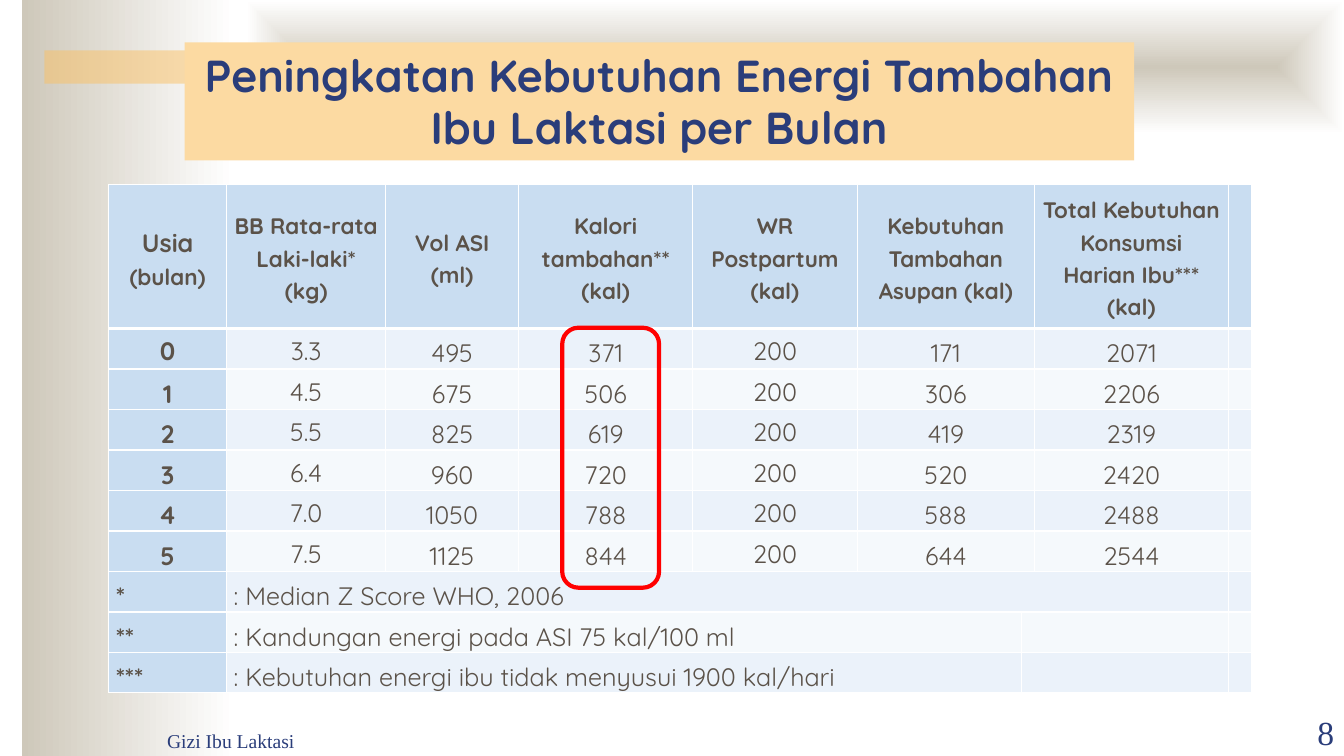
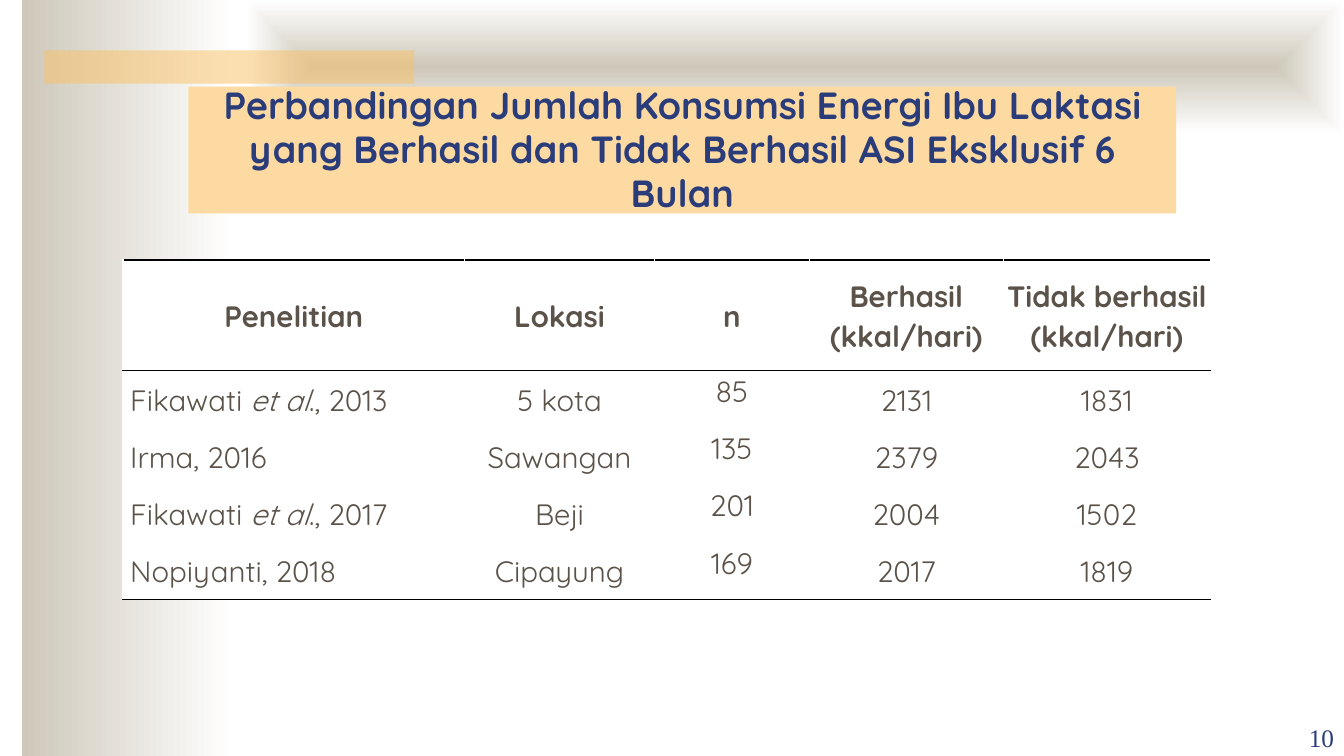
import pptx
import pptx.dml.color
import pptx.enum.dml
import pptx.enum.shapes
import pptx.enum.text
import pptx.oxml
import pptx.oxml.ns
import pptx.util
from lxml import etree

Cm, Pt = pptx.util.Cm, pptx.util.Pt
RGB = pptx.dml.color.RGBColor
SHAPE = pptx.enum.shapes.MSO_SHAPE
ALIGN = pptx.enum.text.PP_ALIGN
ANCHOR = pptx.enum.text.MSO_ANCHOR
qn = pptx.oxml.ns.qn

# Shared look
NAVY, BROWN = RGB(0x2A, 0x3D, 0x7A), RGB(0x5B, 0x52, 0x49)
SAND, WHITE, BLACK = RGB(0xCE, 0xC8, 0xBA), RGB(255, 255, 255), RGB(0, 0, 0)
ORANGE, PEACH, RED = RGB(0xFA, 0xC1, 0x64), RGB(0xFC, 0xDA, 0xA2), RGB(255, 0, 0)
HEAD_BLUE = RGB(0xC9, 0xDD, 0xF1)
ROW_BLUES = (RGB(0xF5, 0xF9, 0xFC), RGB(0xEB, 0xF2, 0xFA))
BODY_FONT, FOOTER_FONT = "Quicksand", "Times New Roman"
NUMBER_PLACE = (30.48, 17.81, 3.39, 1.27)
FOOTER_PLACE = (3.96, 17.81, 7.06, 1.27)

# Slide 8 content
ENERGY_TITLE = "Peningkatan Kebutuhan Energi Tambahan Ibu Laktasi per Bulan"
ENERGY_HEADS = (
    (("Usia ", {"size": Pt(18)}), ("(bulan)", {})),
    "BB Rata-rata Laki-laki*\v(kg)",
    "Vol ASI (ml)",
    "Kalori tambahan** (kal)",
    "WR Postpartum (kal)",
    "Kebutuhan Tambahan Asupan (kal)",
    "Total Kebutuhan Konsumsi Harian Ibu*** (kal)",
)
ENERGY_ROWS = (
    ("0", "3.3", "495", "371", "200", "171", "2071"),
    ("1", "4.5", "675", "506", "200", "306", "2206"),
    ("2", "5.5", "825", "619", "200", "419", "2319"),
    ("3", "6.4", "960", "720", "200", "520", "2420"),
    ("4", "7.0", "1050", "788", "200", "588", "2488"),
    ("5", "7.5", "1125", "844", "200", "644", "2544"),
)
ENERGY_NOTES = (
    ("*", ": Median Z Score WHO, 2006"),
    ("**", ": Kandungan energi pada ASI 75 kal/100 ml"),
    ("***", ": Kebutuhan energi ibu tidak menyusui 1900 kal/hari"),
)
ENERGY_WIDTHS = (2.97, 4.01, 3.35, 4.39, 4.14, 4.14, 0.33, 4.88, 0.58)
TEXT_COLUMNS = (0, 1, 2, 3, 4, 5, 7)

# Slide 10 content
STUDY_TITLE = ("Perbandingan Jumlah Konsumsi Energi Ibu Laktasi yang Berhasil "
               "dan Tidak Berhasil ASI Eksklusif 6 Bulan")
ET_AL = ("et al", {"italic": True})
STUDY_ROWS = (
    ("Penelitian", "Lokasi", "n", "Berhasil\n(kkal/hari)", "Tidak berhasil\n(kkal/hari)"),
    ((("Fikawati ", {}), ET_AL, ("., 2013", {})), "5 kota", "85", "2131", "1831"),
    ("Irma, 2016", "Sawangan", "135", "2379", "2043"),
    ((("Fikawati ", {}), ET_AL, ("., 2017", {})), "Beji", "201", "2004", "1502"),
    ("Nopiyanti, 2018", "Cipayung", "169", "2017", "1819"),
)
STUDY_WIDTHS = (8.61, 4.78, 3.91, 4.88, 5.23)


def place(values):
    return [Cm(value) for value in values]


def style_font(font, size, color, name=BODY_FONT, bold=False):
    font.size, font.name, font.bold = Pt(size), name, bold
    font.color.rgb = color


def add_backdrop(deck, page):
    """Draw the bands on a page, then move them to the back of the master."""
    bands = [page.shapes.add_shape(SHAPE.RECTANGLE, *place(spot)) for spot in (
        (0.56, 0, 5.36, 19.05), (6.2, 0, 27.66, 3.38), (1.12, 1.27, 9.32, 0.84))]
    side, top, accent = bands
    for band in (side, top):
        band.fill.gradient()
        band.fill.gradient_angle = 0
        for stop, color in zip(band.fill.gradient_stops, (SAND, WHITE)):
            stop.color.rgb = color
    # The top band fades from its middle to its edges
    linear = top.element.find(".//" + qn("a:lin"))
    center = etree.Element(qn("a:path"), {"path": "rect"})
    etree.SubElement(center, qn("a:fillToRect"), dict.fromkeys("ltrb", "50000"))
    linear.getparent().replace(linear, center)
    accent.fill.solid()
    accent.fill.fore_color.rgb = ORANGE
    tint = accent.element.find(".//" + qn("a:srgbClr"))
    etree.SubElement(tint, qn("a:alpha"), {"val": "50000"})
    for order, band in enumerate(bands):
        band.line.fill.background()
        band.shadow.inherit = False
        band.element.find(".//" + qn("p:cNvPr")).set("id", str(100 + order))
        deck.slide_master.shapes.element.insert(2 + order, band.element)


def set_title(page, text, spot, size, anchor):
    title = page.shapes.title
    title.left, title.top, title.width, title.height = place(spot)
    title.fill.solid()
    title.fill.fore_color.rgb = PEACH
    frame = title.text_frame
    frame.text, frame.word_wrap, frame.vertical_anchor = text, True, anchor
    frame.auto_size = pptx.enum.text.MSO_AUTO_SIZE.NONE
    para = frame.paragraphs[0]
    para.alignment, para.line_spacing = ALIGN.CENTER, 0.97
    style_font(para.font, size, NAVY, bold=True)


def add_footer(page, text, spot, size, align):
    frame = page.shapes.add_textbox(*place(spot)).text_frame
    frame.text, frame.word_wrap, frame.vertical_anchor = text, True, ANCHOR.BOTTOM
    frame.paragraphs[0].alignment = align
    style_font(frame.paragraphs[0].font, size, NAVY, FOOTER_FONT)


def add_table(page, left, top, widths, heights):
    table = page.shapes.add_table(len(heights), len(widths), *place(
        (left, top, sum(widths), sum(heights)))).table
    table.first_row = table.horz_banding = False
    for column, width in zip(table.columns, widths):
        column.width = Cm(width)
    for row, height in zip(table.rows, heights):
        row.height = Cm(height)
    return table


def paint_cell(cell, fill, top, bottom):
    """Set the fill and the borders; top and bottom are (colour, points)."""
    props = cell._tc.get_or_add_tcPr()
    side = (WHITE, 1)
    for tag, (color, width) in zip(("lnL", "lnR", "lnT", "lnB"), (side, side, top, bottom)):
        line = etree.SubElement(props, qn("a:" + tag), {"w": str(Pt(width))})
        solid = etree.SubElement(line, qn("a:solidFill"))
        etree.SubElement(solid, qn("a:srgbClr"), {"val": str(color)})
    cell.fill.solid()
    cell.fill.fore_color.rgb = fill


def write_cell(cell, content, size, bold, align, anchor, spacing, inset):
    """Write a string, or a tuple of (text, font changes) spans."""
    cell.margin_left = cell.margin_right = Cm(inset)
    cell.margin_top = cell.margin_bottom = 0
    cell.vertical_anchor = anchor
    if isinstance(content, str):
        cell.text_frame.text = content
    for para in cell.text_frame.paragraphs:
        para.alignment, para.line_spacing = align, spacing
        style_font(para.font, size, BROWN, bold=bold)
    if not isinstance(content, str):
        for text, changes in content:
            span = cell.text_frame.paragraphs[0].add_run()
            span.text = text
            for name, value in changes.items():
                setattr(span.font, name, value)


def build_energy_page(page):
    set_title(page, ENERGY_TITLE, (4.65, 1.07, 23.93, 2.97), 32, ANCHOR.BOTTOM)
    add_footer(page, "Gizi Ibu Laktasi", FOOTER_PLACE, 14, ALIGN.LEFT)
    add_footer(page, "8", NUMBER_PLACE, 24, ALIGN.RIGHT)

    rows = (ENERGY_HEADS,) + ENERGY_ROWS + ENERGY_NOTES
    first_note = 1 + len(ENERGY_ROWS)
    table = add_table(page, 2.74, 4.65, ENERGY_WIDTHS, [3.63] + [1.02] * (len(rows) - 1))
    thin, thick = (WHITE, 1), (WHITE, 3)
    for r, row in enumerate(rows):
        texts = dict(zip(TEXT_COLUMNS, row))
        for c in range(len(ENERGY_WIDTHS)):
            head = r == 0 or c == 0
            middle = r == 0 or c in (1, 4) and r < first_note or (r, c) == (1, 0)
            cell = table.cell(r, c)
            paint_cell(cell, HEAD_BLUE if head else ROW_BLUES[r % 2],
                       thick if r == 1 else thin, thick if r == 0 else thin)
            write_cell(cell, texts.get(c, ""), 16 if r == 0 else 18, head,
                       ALIGN.LEFT if r >= first_note else ALIGN.CENTER,
                       ANCHOR.MIDDLE if middle else ANCHOR.BOTTOM, 1.15, 0.18)
        if r < first_note:
            merges = [(5, 6)]
        elif r == first_note:
            merges = [(1, 7)]
        else:
            merges = [(1, 5), (6, 7)]
        for start, end in merges:
            table.cell(r, start).merge(table.cell(r, end))

    # Frame around the extra calories
    frame = page.shapes.add_shape(SHAPE.ROUNDED_RECTANGLE, *place((14.17, 8.26, 2.44, 6.55)))
    frame.shadow.inherit = False
    frame.fill.background()
    frame.line.color.rgb, frame.line.width = RED, Pt(3)


def build_study_page(page):
    set_title(page, STUDY_TITLE, (4.75, 2.18, 24.89, 3.2), 27, ANCHOR.MIDDLE)
    last = len(STUDY_ROWS) - 1
    table = add_table(page, 3.1, 6.55, STUDY_WIDTHS, [2.79] + [1.44] * last)
    rule, blank = (BLACK, 1), (WHITE, 1)
    for r, row in enumerate(STUDY_ROWS):
        for c, content in enumerate(row):
            cell = table.cell(r, c)
            paint_cell(cell, WHITE, rule if r <= 1 else blank,
                       rule if r in (0, last) else blank)
            write_cell(cell, content, 21, r == 0,
                       ALIGN.LEFT if c == 0 and r else ALIGN.CENTER,
                       ANCHOR.TOP if c == 2 and r else ANCHOR.MIDDLE,
                       1.07, 0.18 if c == 0 else 0)
    add_footer(page, "10", NUMBER_PLACE, 18, ALIGN.RIGHT)


def main():
    deck = pptx.Presentation()
    deck.slide_width, deck.slide_height = Cm(33.87), Cm(19.05)
    title_only = deck.slide_layouts[5]
    energy_page = deck.slides.add_slide(title_only)
    add_backdrop(deck, energy_page)
    build_energy_page(energy_page)
    build_study_page(deck.slides.add_slide(title_only))
    deck.save("out.pptx")


if __name__ == "__main__":
    main()
